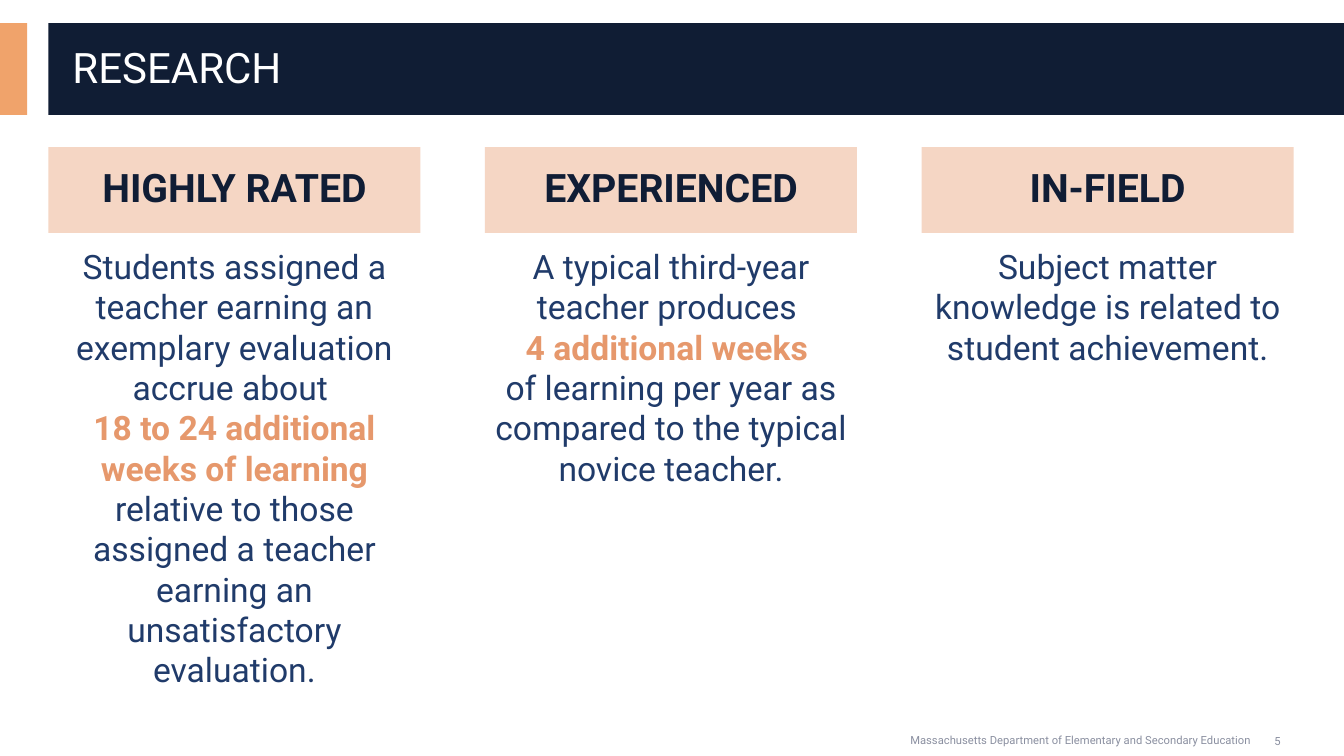
from pptx import Presentation
from pptx.dml.color import RGBColor
from pptx.enum.shapes import MSO_SHAPE as Shape
from pptx.enum.text import MSO_ANCHOR as Anchor, PP_ALIGN as Align
from pptx.util import Pt

EMU_PER_PX = 9144  # 100 px to the inch
FONT = "Roboto"
NAVY, BLUE, ORANGE = "101D35", "203B6A", "E6986C"
GREY, PEACH = "8A8FA0", "F5D6C4"

COLUMN_LEFT, COLUMN_STEP, COLUMN_WIDTH = 48, 433, 369
# Each finding is a list of (text, is highlighted); "\n" ends a line.
COLUMNS = [
    ("HIGHLY RATED", [
        ("Students assigned a teacher earning an exemplary evaluation accrue about \n", False),
        ("18 to 24 additional weeks of learning ", True),
        ("relative to those assigned a teacher earning an unsatisfactory evaluation.", False),
    ]),
    ("EXPERIENCED", [
        ("A typical third-year teacher produces \n", False),
        ("4 additional weeks \n", True),
        ("of learning per year as compared to the typical novice teacher.", False),
    ]),
    ("IN-FIELD", [
        ("Subject matter knowledge is related to student achievement.", False),
    ]),
]


def px(*lengths):
    return [length * EMU_PER_PX for length in lengths]


def color(hex_code):
    return RGBColor.from_string(hex_code)


def add_block(page, bounds, fill):
    block = page.shapes.add_shape(Shape.RECTANGLE, *px(*bounds))
    block.shadow.inherit = False
    block.fill.solid()
    block.fill.fore_color.rgb = color(fill)
    block.line.fill.background()
    return block


def add_box(page, bounds):
    return page.shapes.add_textbox(*px(*bounds))


def write(box, pieces, size, align=Align.LEFT, anchor=Anchor.TOP, spacing=1.0):
    """Fill one paragraph with (text, colour, bold) pieces."""
    frame = box.text_frame
    frame.word_wrap = True
    frame.vertical_anchor = anchor
    para = frame.paragraphs[0]
    para.alignment = align
    para.line_spacing = spacing
    para.font.size = Pt(size)
    for text, hex_code, bold in pieces:
        span = para.add_run()
        span.text = text.removesuffix("\n")
        span.font.name = FONT
        span.font.size = Pt(size)
        span.font.bold = bold
        span.font.color.rgb = color(hex_code)
        if text.endswith("\n"):
            para.add_line_break()


def add_column(page, left, heading, finding):
    header = add_block(page, (left, 146, COLUMN_WIDTH, 85), PEACH)
    write(header, [(heading, NAVY, True)], 28, Align.CENTER, Anchor.MIDDLE, 0.9)
    body = add_box(page, (left, 239, COLUMN_WIDTH, 415))
    pieces = [(text, ORANGE if highlighted else BLUE, highlighted)
              for text, highlighted in finding]
    write(body, pieces, 24, Align.CENTER)


def add_title(page, text):
    add_block(page, (0, 23, 27, 91), "F0A36B")
    add_block(page, (48, 23, 1285, 91), "101D34")
    title = add_box(page, (62, 32, 1250, 74))
    write(title, [(text, "FFFFFF", False)], 30, anchor=Anchor.MIDDLE, spacing=0.9)


def add_footer(page, text, number):
    write(add_box(page, (893, 723, 399, 24)), [(text, GREY, False)], 8)
    write(add_box(page, (1242, 715, 50, 40)), [(number, GREY, False)], 8,
          Align.CENTER, Anchor.MIDDLE)


def main():
    deck = Presentation()
    deck.slide_width, deck.slide_height = px(1333, 750)
    page = deck.slides.add_slide(deck.slide_layouts[6])
    add_title(page, "RESEARCH")
    for index, (heading, finding) in enumerate(COLUMNS):
        add_column(page, COLUMN_LEFT + index * COLUMN_STEP, heading, finding)
    add_footer(page, "Massachusetts Department of Elementary and Secondary Education", "5")
    deck.save("out.pptx")


if __name__ == "__main__":
    main()
